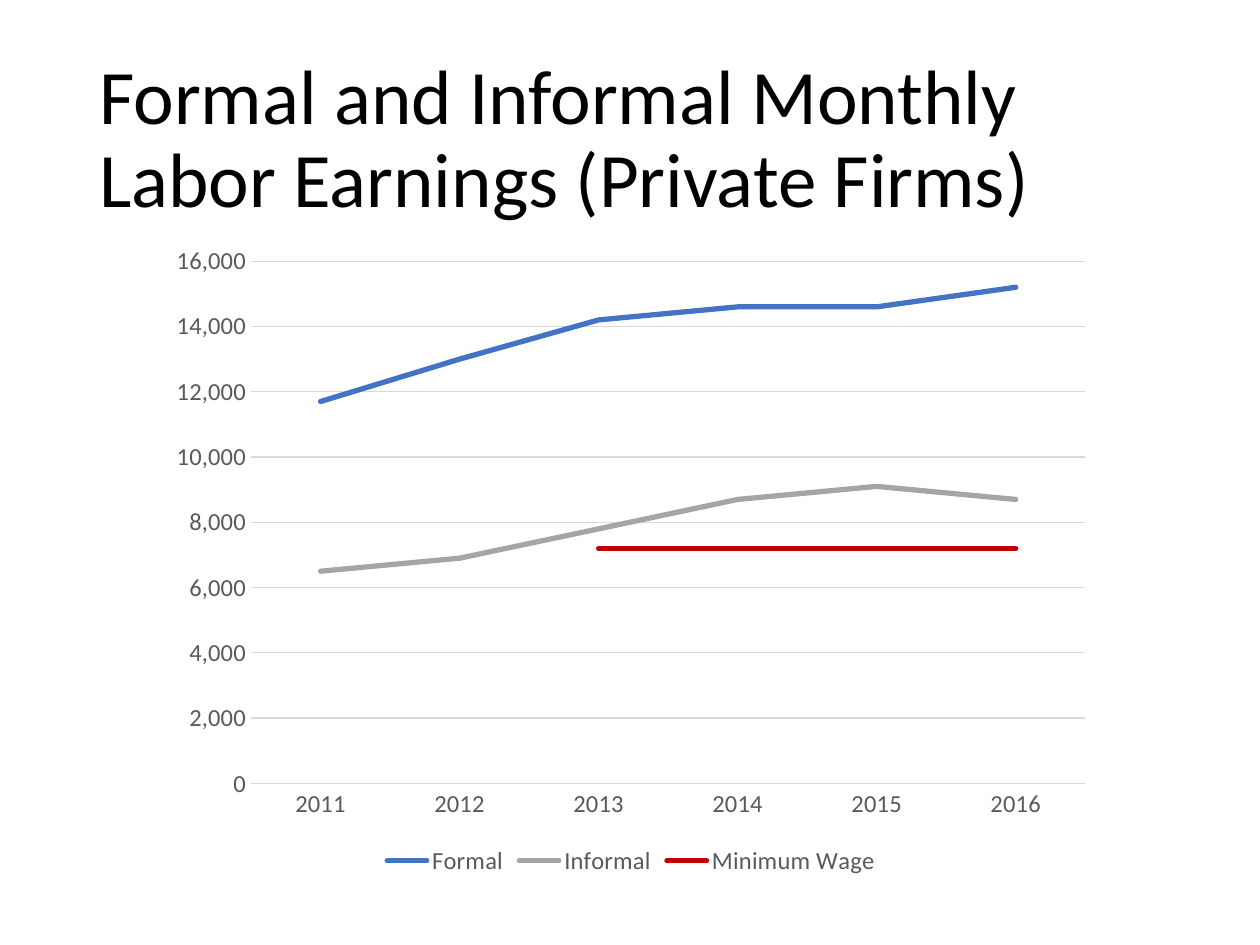
from dataclasses import dataclass
from typing import Optional

from pptx import Presentation
from pptx.chart.data import CategoryChartData
from pptx.dml.color import RGBColor
from pptx.enum.chart import XL_CHART_TYPE as ChartType
from pptx.enum.chart import XL_LEGEND_POSITION as LegendPosition
from pptx.enum.chart import XL_TICK_MARK as TickMark
from pptx.enum.text import MSO_ANCHOR as Anchor
from pptx.util import Cm, Pt

BLACK = RGBColor(0x00, 0x00, 0x00)
DARK_GRAY = RGBColor(0x59, 0x59, 0x59)
GRID_GRAY = RGBColor(0xD9, 0xD9, 0xD9)
BLUE = RGBColor(0x44, 0x72, 0xC4)
GRAY = RGBColor(0xA5, 0xA5, 0xA5)
RED = RGBColor(0xC0, 0x00, 0x00)

FONT = "Calibri"
TITLE = "Formal and Informal Monthly Labor Earnings (Private Firms)"
YEARS = [str(year) for year in range(2011, 2017)]


@dataclass
class Earnings:
    name: str
    color: RGBColor
    values: list[Optional[int]]


EARNINGS = [
    Earnings("Formal", BLUE, [11700, 13000, 14200, 14600, 14600, 15200]),
    Earnings("Informal", GRAY, [6500, 6900, 7800, 8700, 9100, 8700]),
    Earnings("Minimum Wage", RED, [None, None] + [7200] * 4),
]


def set_attributes(target, values: dict) -> None:
    for name, value in values.items():
        setattr(target, name, value)


def style_font(font, size: float, color: RGBColor) -> None:
    set_attributes(font, {"name": FONT, "size": Pt(size), "bold": False})
    font.color.rgb = color


def style_line(line, color: RGBColor, width: float) -> None:
    line.color.rgb = color
    line.width = Pt(width)


def add_title(page) -> None:
    box = page.shapes.add_textbox(Cm(1.75), Cm(1.01), Cm(21.9), Cm(3.68))
    frame = box.text_frame
    set_attributes(frame, {"word_wrap": True, "vertical_anchor": Anchor.MIDDLE})
    para = frame.paragraphs[0]
    para.line_spacing = 0.9
    span = para.add_run()
    span.text = TITLE
    style_font(span.font, 44, BLACK)


def style_axes(chart) -> None:
    for axis in (chart.category_axis, chart.value_axis):
        set_attributes(axis, {"major_tick_mark": TickMark.NONE,
                              "minor_tick_mark": TickMark.NONE})
        style_font(axis.tick_labels.font, 14, DARK_GRAY)
    style_line(chart.category_axis.format.line, GRID_GRAY, 0.75)

    axis = chart.value_axis
    set_attributes(axis, {"minimum_scale": 0, "maximum_scale": 16000,
                          "major_unit": 2000, "has_major_gridlines": True})
    set_attributes(axis.tick_labels, {"number_format": "#,##0",
                                      "number_format_is_linked": False})
    axis.format.line.fill.background()
    style_line(axis.major_gridlines.format.line, GRID_GRAY, 0.75)


def add_earnings_chart(page) -> None:
    data = CategoryChartData(number_format="#,##0")
    data.categories = YEARS
    for earnings in EARNINGS:
        data.add_series(earnings.name, earnings.values)
    chart = page.shapes.add_chart(
        ChartType.LINE, Cm(3.18), Cm(4.7), Cm(19.08), Cm(13.06), data).chart

    set_attributes(chart, {"has_title": False, "has_legend": True})
    style_font(chart.font, 10, BLACK)
    set_attributes(chart.legend, {"position": LegendPosition.BOTTOM,
                                  "include_in_layout": False})
    style_font(chart.legend.font, 14, DARK_GRAY)
    style_axes(chart)

    plot = chart.plots[0]
    plot.vary_by_categories = False
    for series, earnings in zip(plot.series, EARNINGS):
        series.smooth = False
        line = series.format.line
        style_line(line, earnings.color, 3)
        series.format.line._get_or_add_ln().set("cap", "rnd")


def main() -> None:
    deck = Presentation()
    set_attributes(deck, {"slide_width": Cm(25.4), "slide_height": Cm(19.05)})
    page = deck.slides.add_slide(deck.slide_layouts[6])
    add_title(page)
    add_earnings_chart(page)
    deck.save("out.pptx")


if __name__ == "__main__":
    main()
